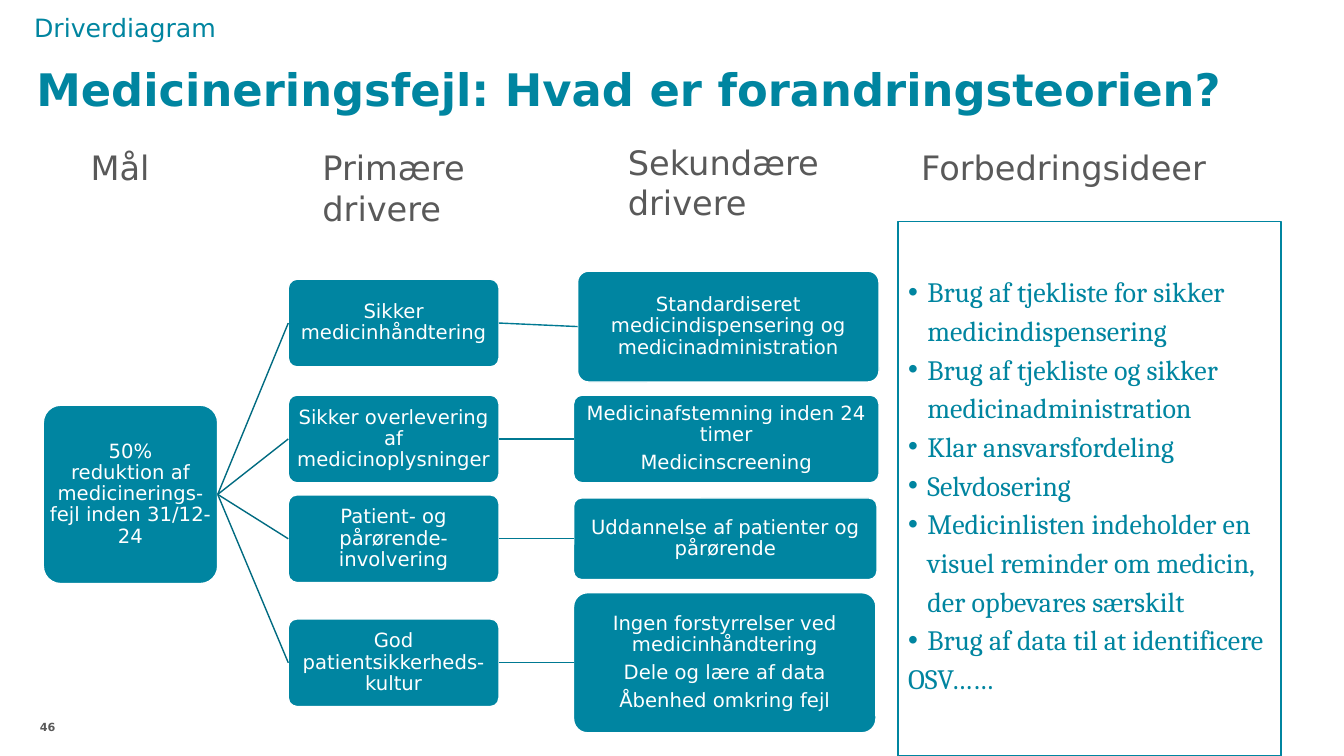
"""Build a driver diagram slide on medication errors, on a grid of tenth-inch cells."""
from dataclasses import dataclass

from lxml import etree
from pptx import Presentation, util as u
from pptx.dml.color import RGBColor
from pptx.enum import shapes, text
from pptx.oxml.ns import qn

CELL = u.Inches(0.1)
COLUMNS, ROWS = 133.33, 75
LEFT_SIDE, RIGHT_SIDE = 1, 3


@dataclass(frozen=True)
class Theme:
    """Colours, fonts and type sizes of the slide."""
    teal: str = "0085A0"
    node: str = "0085A1"
    goal_link: str = "006B81"
    driver_link: str = "007992"
    grey: str = "595959"
    white: str = "FFFFFF"
    sans: str = "DejaVu Sans"
    serif: str = "Cambria"
    title: int = 32
    heading: int = 24
    ideas: int = 20
    kicker: int = 18
    label: int = 14
    number: int = 8


@dataclass(frozen=True)
class Area:
    """Left, top, width and height in grid cells."""
    left: float
    top: float
    width: float
    height: float


@dataclass(frozen=True)
class Style:
    """Type style of a block of text."""
    size: int
    colour: str
    font: str
    bold: bool = False


@dataclass(frozen=True)
class Label:
    """A free-standing line of text."""
    wording: str
    area: Area
    style: Style


@dataclass(frozen=True)
class Driver:
    """A primary driver with the secondary drivers that belong to it."""
    primary: str
    top: float
    secondary: str
    secondary_area: Area


THEME = Theme()
HEADING = Style(THEME.heading, THEME.grey, THEME.sans)
NODE = Style(THEME.label, THEME.white, THEME.sans)
TITLE = Style(THEME.title, THEME.teal, THEME.sans, True)
IDEAS = Style(THEME.ideas, THEME.teal, THEME.serif)
NUMBER = Style(THEME.number, THEME.grey, THEME.sans, True)
KICKER = Style(THEME.kicker, THEME.teal, THEME.sans)

NO_INSETS = dict.fromkeys(("margin_left", "margin_top", "margin_right", "margin_bottom"), 0)
NODE_FRAME = {**dict.fromkeys(NO_INSETS, u.Inches(0.01)),
              "vertical_anchor": text.MSO_ANCHOR.MIDDLE}
NODE_PARAGRAPH = {"alignment": text.PP_ALIGN.CENTER, "line_spacing": 0.9,
                  "space_after": u.Pt(0.35 * THEME.label)}

HEADINGS = [
    Label("Mål", Area(8, 14.1, 14.2, 5), HEADING),
    Label("Primære drivere", Area(31, 14.1, 23.9, 9.1), HEADING),
    Label("Sekundære drivere", Area(61.3, 13.6, 27.8, 9.1), HEADING),
    Label("Forbedringsideer", Area(90.4, 14.1, 35.3, 5), HEADING),
    Label("Driverdiagram", Area(2.4, 0.7, 66.7, 4), KICKER),
]
GOAL = "50%\vreduktion af medicinerings-fejl inden 31/12-24"
GOAL_AREA = Area(4.3, 40.2, 17.3, 17.7)
PRIMARY_LEFT, PRIMARY_WIDTH, PRIMARY_HEIGHT = 28.6, 20.9, 8.7
DRIVERS = [
    Driver("Sikker medicinhåndtering", 27.7,
           "Standardiseret medicindispensering og medicinadministration",
           Area(57.3, 26.9, 29.9, 11)),
    Driver("Sikker overlevering af medicinoplysninger", 39.2,
           "Medicinafstemning inden 24 timer\nMedicinscreening",
           Area(56.9, 39.2, 30.3, 8.7)),
    Driver("Patient- og pårørende-involvering", 49.1,
           "Uddannelse af patienter og pårørende", Area(56.9, 49.4, 30.1, 8.1)),
    Driver("God patientsikkerheds-kultur", 61.4,
           "Ingen forstyrrelser ved medicinhåndtering\nDele og lære af data\nÅbenhed omkring fejl",
           Area(56.9, 58.8, 30, 13.9)),
]
IDEA_LIST = [
    "Brug af tjekliste for sikker medicindispensering",
    "Brug af tjekliste og sikker medicinadministration",
    "Klar ansvarsfordeling",
    "Selvdosering",
    "Medicinlisten indeholder en visuel reminder om medicin, der opbevares særskilt",
    "Brug af data til at identificere",
]
CLOSING = "OSV……"


def cells(count: float) -> int:
    """Turn grid cells into a slide length."""
    return round(count * CELL)


def bounds(area: Area) -> tuple:
    """Give the slide lengths of an area."""
    return tuple(map(cells, (area.left, area.top, area.width, area.height)))


def apply(target, values: dict) -> None:
    """Set every attribute named in a dict of format values."""
    for name, value in values.items():
        setattr(target, name, value)


def write(box, wording: str, style: Style, frame: dict, paragraph: dict) -> None:
    """Fill a shape with formatted text."""
    page_text = box.text_frame
    page_text.text = wording
    apply(page_text, {"word_wrap": True, "auto_size": text.MSO_AUTO_SIZE.NONE, **frame})
    for para in page_text.paragraphs:
        apply(para, paragraph)
        for span in para.runs:
            apply(span.font, {"name": style.font, "size": u.Pt(style.size), "bold": style.bold})
            span.font.color.rgb = RGBColor.from_string(style.colour)


def place(box, area: Area) -> None:
    """Move a placeholder to an area."""
    apply(box, dict(zip(("left", "top", "width", "height"), bounds(area))))


def paint(box, fill: str, line: str) -> None:
    """Give a shape a solid fill and a one-point outline."""
    box.fill.solid()
    box.fill.fore_color.rgb = RGBColor.from_string(fill)
    box.line.color.rgb = RGBColor.from_string(line)
    box.line.width = u.Pt(1)


def add_label(page, label: Label, frame: dict, paragraph: dict) -> None:
    """Add a text box."""
    box = page.shapes.add_textbox(*bounds(label.area))
    write(box, label.wording, label.style, frame, paragraph)


def add_node(page, wording: str, area: Area):
    """Add a rounded box of the diagram."""
    box = page.shapes.add_shape(shapes.MSO_SHAPE.ROUNDED_RECTANGLE, *bounds(area))
    box.adjustments[0] = 0.1
    box.shadow.inherit = False
    paint(box, THEME.node, THEME.white)
    write(box, wording, NODE, NODE_FRAME, NODE_PARAGRAPH)
    return box


def link(page, start, end, colour: str) -> None:
    """Join the right side of one node to the left side of another."""
    line = page.shapes.add_connector(shapes.MSO_CONNECTOR.STRAIGHT, 0, 0, 0, 0)
    line.begin_connect(start, RIGHT_SIDE)
    line.end_connect(end, LEFT_SIDE)
    line.line.color.rgb = RGBColor.from_string(colour)
    line.line.width = u.Pt(1)
    etree.SubElement(line._element.spPr, qn("a:effectLst"))


def fill_ideas(box) -> None:
    """Fill the framed list of improvement ideas."""
    place(box, Area(89.1, 22, 38, 53))
    paint(box, THEME.white, THEME.teal)
    write(box, "\n".join([*IDEA_LIST, CLOSING]), IDEAS,
          {"vertical_anchor": text.MSO_ANCHOR.MIDDLE, "margin_bottom": u.Inches(0.18)},
          {"alignment": text.PP_ALIGN.LEFT, "line_spacing": 1.15, "space_before": u.Pt(0)})
    hang = u.Inches(0.19)
    *bulleted, closing = box.text_frame.paragraphs
    for para in bulleted:
        para._p.get_or_add_pPr().attrib.update({"marL": str(hang), "indent": str(-hang)})
    properties = closing._p.get_or_add_pPr()
    properties.attrib.update({"marL": "0", "indent": "0"})
    etree.SubElement(properties, qn("a:buNone"))


def main() -> None:
    """Build and save the slide."""
    deck = Presentation()
    apply(deck, {"slide_width": cells(COLUMNS), "slide_height": cells(ROWS)})
    page = deck.slides.add_slide(deck.slide_layouts[1])
    title = page.shapes.title
    place(title, Area(3.6, 6.7, 128.9, 12.5))
    write(title, "Medicineringsfejl: Hvad er forandringsteorien?", TITLE,
          {**NO_INSETS, "vertical_anchor": text.MSO_ANCHOR.TOP},
          {"alignment": text.PP_ALIGN.LEFT, "line_spacing": 0.9})
    fill_ideas(page.placeholders[1])
    for heading in HEADINGS:
        add_label(page, heading, {}, {})
    goal = add_node(page, GOAL, GOAL_AREA)
    for driver in DRIVERS:
        primary = add_node(page, driver.primary,
                           Area(PRIMARY_LEFT, driver.top, PRIMARY_WIDTH, PRIMARY_HEIGHT))
        secondary = add_node(page, driver.secondary, driver.secondary_area)
        link(page, goal, primary, THEME.goal_link)
        link(page, primary, secondary, THEME.driver_link)
    add_label(page, Label("46", Area(1.6, 71.5, 3.9, 3.5), NUMBER),
              NO_INSETS, {"alignment": text.PP_ALIGN.RIGHT})
    deck.save("out.pptx")


if __name__ == "__main__":
    main()
